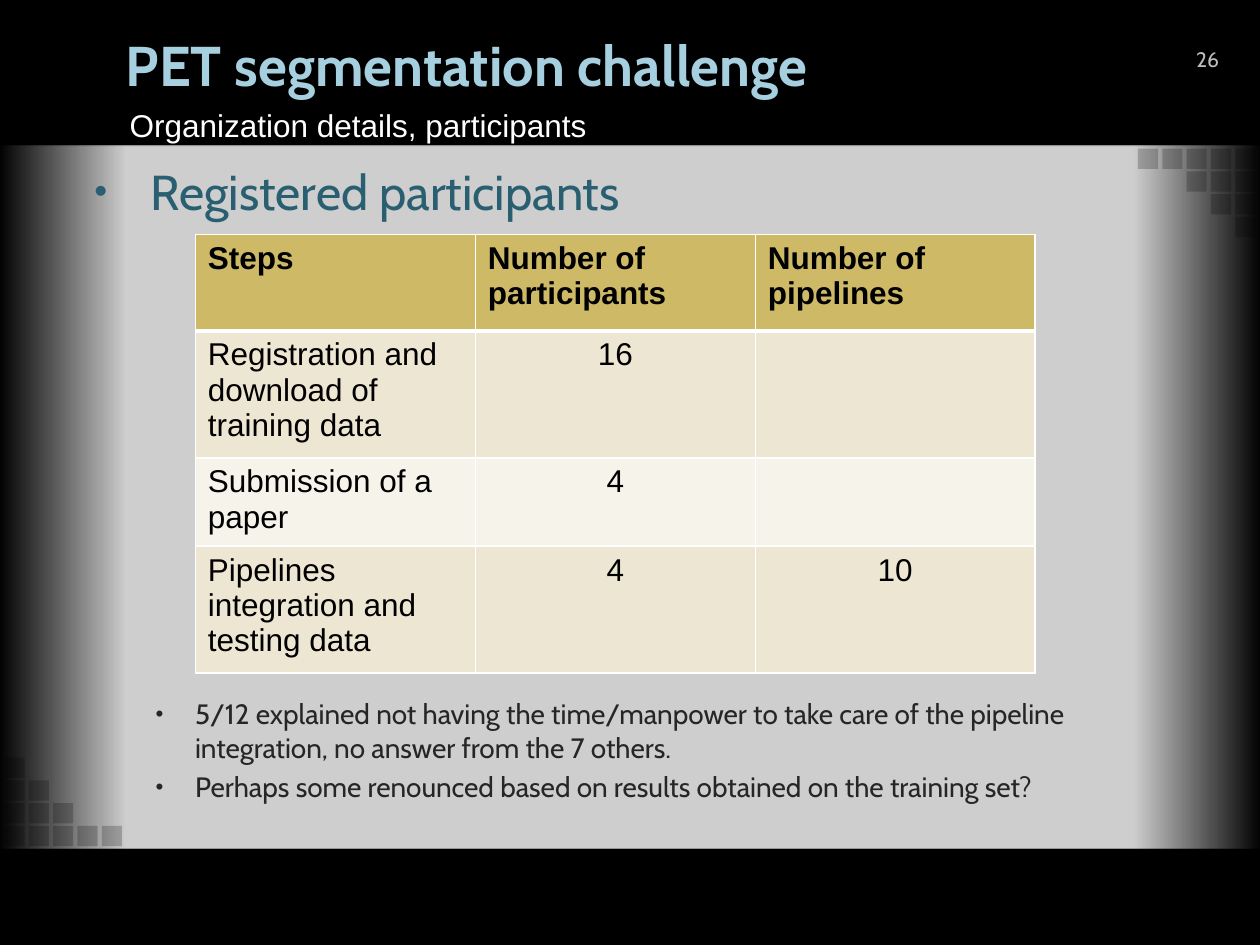
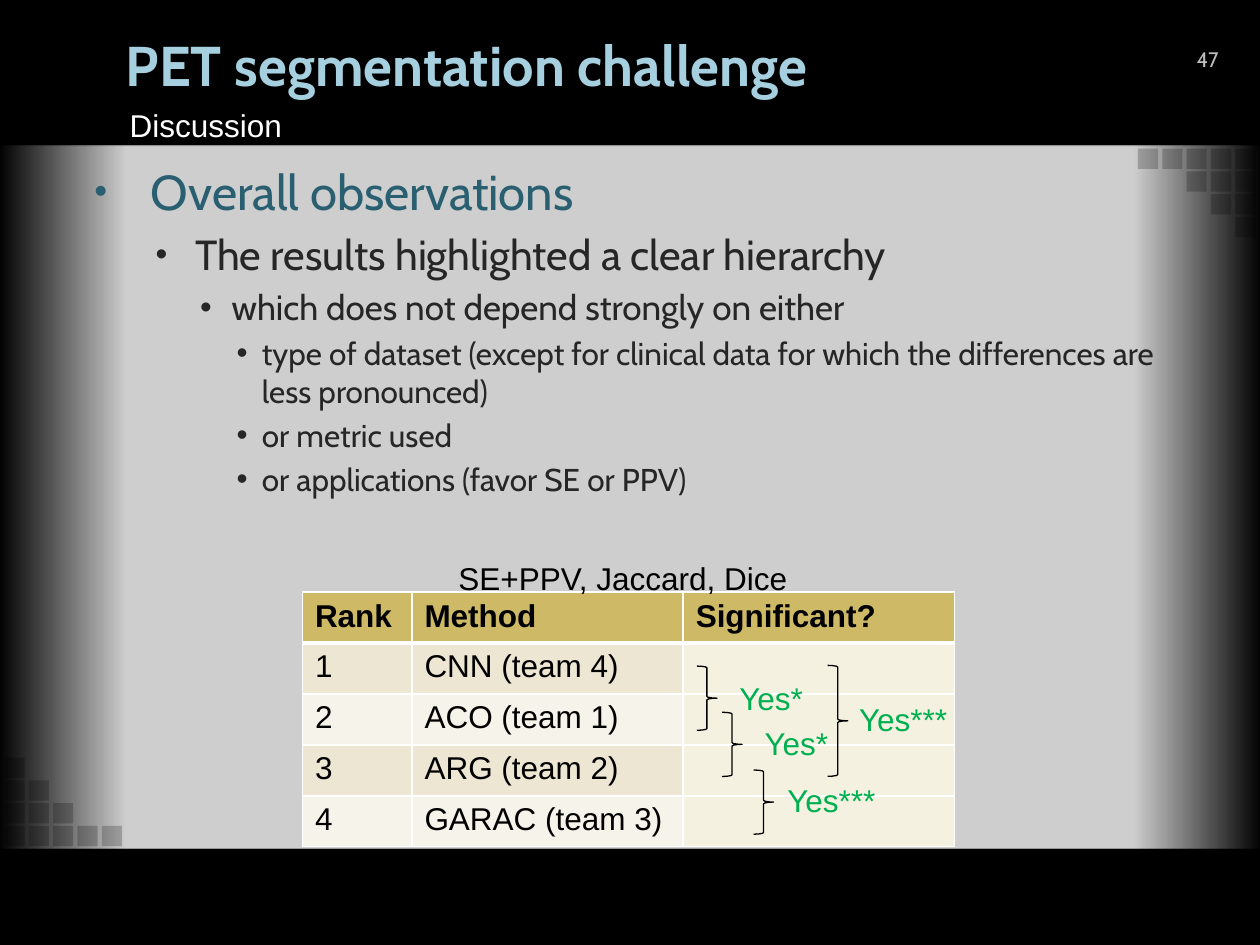
from lxml.etree import SubElement as Sub
from pptx import Presentation
from pptx.dml.color import RGBColor as RGB
from pptx.enum.shapes import MSO_SHAPE as Shape
from pptx.enum.text import MSO_ANCHOR as Anchor, MSO_AUTO_SIZE as AutoSize, PP_ALIGN as Align
from pptx.oxml.ns import qn
from pptx.util import Pt

BLACK = RGB(0x00, 0x00, 0x00)
WHITE = RGB(0xFF, 0xFF, 0xFF)
TITLE_BLUE = RGB(0xA6, 0xD0, 0xDF)
HEADING_TEAL = RGB(0x29, 0x5F, 0x71)
BODY_GREY = RGB(0x26, 0x26, 0x26)
NUMBER_GREY = RGB(0xBD, 0xBD, 0xBD)
GREEN = RGB(0x00, 0xB0, 0x50)
HEADER_GOLD = RGB(0xCE, 0xB9, 0x66)
ROW_SAND = RGB(0xED, 0xE6, 0xD3)
ROW_IVORY = RGB(0xF6, 0xF3, 0xEA)
COLUMN_CREAM = RGB(0xF5, 0xF1, 0xE0)

WIDTH, HEIGHT = 720, 540
PANEL_TOP, PANEL_BOTTOM = 83, 485.3
PANEL_STOPS = [(0, 0), (10, 80), (90, 80), (100, 0)]
SQUARE, SQUARE_STEP_X, SQUARE_STEP_Y = 11.5, 13.9, 13
SQUARE_ROWS = [5, 3, 2, 1]

# level: indent, hanging, size, bullet percent, colour
LEVELS = [
    (43.2, 32.4, 28, 75, HEADING_TEAL),
    (68.4, 22.5, 24, 80, BODY_GREY),
    (89.3, 18, 20, 95, BODY_GREY),
    (106.6, 14.4, 18, 100, BODY_GREY),
]

TITLE = "PET segmentation challenge"
PARTICIPANTS = {
    "number": "26",
    "subtitle": ("Organization details, participants", 278),
    "body": [(0, "Registered participants")],
}
PARTICIPANT_NOTES = [
    (1, "5/12 explained not having the time/manpower to take care of the pipeline "
        "integration, no answer from the 7 others."),
    (1, "Perhaps some renounced based on results obtained on the training set?"),
]
PARTICIPANT_ROWS = [
    ("Steps", "Number of participants", "Number of pipelines"),
    ("Registration and download of training data", "16", ""),
    ("Submission of a paper", "4", ""),
    ("Pipelines integration and testing data", "4", "10"),
]
DISCUSSION = {
    "number": "47",
    "subtitle": ("Discussion", 102.3),
    "body": [
        (0, "Overall observations"),
        (1, "The results highlighted a clear hierarchy"),
        (2, "which does not depend strongly on either"),
        (3, "type of dataset (except for clinical data for which the differences are "
            "less pronounced)"),
        (3, "or metric used"),
        (3, "or applications (favor SE or PPV)"),
    ],
}
RANKING_CAPTION = "SE+PPV, Jaccard, Dice"
RANKING_ROWS = [
    ("Rank", "Method", "Significant?"),
    ("1", "CNN (team 4)", ""),
    ("2", "ACO (team 1)", ""),
    ("3", "ARG (team 2)", ""),
    ("4", "GARAC (team 3)", ""),
]
# brace left, top, height; label, left, top, width
COMPARISONS = [
    (398.2, 380.6, 36.7, "Yes*", 415.4, 384.5, 51.1),
    (412.6, 407, 36.7, "Yes*", 429.8, 410.4, 51.1),
    (430.6, 440, 36.7, "Yes***", 442.8, 442.8, 65.5),
    (473, 380.2, 63.4, "Yes***", 483.8, 396.7, 65.5),
]


def add_span(para, text, size, color, font="Arial", bold=False):
    span = para.add_run()
    span.text = text
    span.font.name = font
    span.font.size = Pt(size)
    span.font.bold = bold
    span.font.color.rgb = color


def add_box(slide, left, top, width, height, wrap=True):
    box = slide.shapes.add_textbox(Pt(left), Pt(top), Pt(width), Pt(height))
    box.text_frame.word_wrap = wrap
    return box.text_frame


def add_label(slide, text, left, top, width, color):
    frame = add_box(slide, left, top, width, 29.1, wrap=False)
    frame.auto_size = AutoSize.SHAPE_TO_FIT_TEXT
    add_span(frame.paragraphs[0], text, 18, color)


def add_shape(slide, kind, left, top, width, height, fill=None, line=None):
    shape = slide.shapes.add_shape(kind, Pt(left), Pt(top), Pt(width), Pt(height))
    shape.shadow.inherit = False
    if fill is None:
        shape.fill.background()
    else:
        shape.fill.solid()
        shape.fill.fore_color.rgb = fill
    if line is None:
        shape.line.fill.background()
    else:
        shape.line.color.rgb = line
        shape.line.width = Pt(0.75)
    return shape


def add_color(parent, color, alpha):
    node = Sub(parent, qn("a:srgbClr"), val=str(color))
    Sub(node, qn("a:alpha"), val=str(alpha * 1000))


def add_panel(slide):
    panel = add_shape(slide, Shape.RECTANGLE, 0, PANEL_TOP, WIDTH, PANEL_BOTTOM - PANEL_TOP)
    panel.fill.gradient()
    panel.fill.gradient_angle = 0
    stops = panel._element.spPr.find(qn("a:gradFill")).find(qn("a:gsLst"))
    for stop in list(stops):
        stops.remove(stop)
    for position, alpha in PANEL_STOPS:
        add_color(Sub(stops, qn("a:gs"), pos=str(position * 1000)), WHITE, alpha)


def add_square(slide, left, top):
    square = add_shape(slide, Shape.RECTANGLE, left, top, SQUARE, SQUARE, BLACK)
    fill = square._element.spPr.find(qn("a:solidFill"))
    fill.remove(fill[0])
    add_color(fill, BLACK, 21)


def add_corner_squares(slide):
    for row, count in enumerate(SQUARE_ROWS):
        for column in range(count):
            left = 2.6 + column * SQUARE_STEP_X
            add_square(slide, WIDTH - SQUARE - left, 85 + row * SQUARE_STEP_Y)
            add_square(slide, left, 472 - row * SQUARE_STEP_Y)


def add_bullets(slide, items, top, height, size=None):
    frame = add_box(slide, 36, top, 648, height)
    for index, (level, text) in enumerate(items):
        indent, hanging, level_size, percent, color = LEVELS[level]
        para = frame.paragraphs[0] if index == 0 else frame.add_paragraph()
        props = para._p.get_or_add_pPr()
        props.set("marL", str(Pt(indent)))
        props.set("indent", str(-Pt(hanging)))
        Sub(props, qn("a:buSzPct"), val=str(percent * 1000))
        Sub(props, qn("a:buFont"), typeface="Arial")
        Sub(props, qn("a:buChar"), char="•")
        if index:
            para.space_before = Pt((size or level_size) * 0.2)
        add_span(para, text, size or level_size, color, "Cabin")


def set_borders(cell, top, bottom):
    props = cell._tc.get_or_add_tcPr()
    for side, width in (("L", 1), ("R", 1), ("T", top), ("B", bottom)):
        line = Sub(props, qn("a:ln" + side), w=str(Pt(width)))
        Sub(Sub(line, qn("a:solidFill")), qn("a:srgbClr"), val=str(WHITE))


def add_table(slide, rows, left, top, widths, heights, centred=(), last_fill=None):
    frame = slide.shapes.add_table(len(rows), len(widths), Pt(left), Pt(top),
                                   Pt(sum(widths)), Pt(sum(heights)))
    table = frame.table
    for column, width in zip(table.columns, widths):
        column.width = Pt(width)
    for r, (texts, height) in enumerate(zip(rows, heights)):
        table.rows[r].height = Pt(height)
        for c, text in enumerate(texts):
            cell = table.cell(r, c)
            set_borders(cell, 3 if r == 1 else 1, 3 if r == 0 else 1)
            fill = HEADER_GOLD if r == 0 else ROW_SAND if r % 2 else ROW_IVORY
            if r and last_fill and c == len(widths) - 1:
                fill = last_fill
            cell.fill.solid()
            cell.fill.fore_color.rgb = fill
            para = cell.text_frame.paragraphs[0]
            if r and c in centred:
                para.alignment = Align.CENTER
            if text:
                add_span(para, text, 18, BLACK, bold=r == 0)


def add_page(deck, content):
    slide = deck.slides.add_slide(deck.slide_layouts[6])
    slide.background.fill.solid()
    slide.background.fill.fore_color.rgb = BLACK
    add_panel(slide)
    for top, bottom in ((PANEL_BOTTOM, HEIGHT), (0, PANEL_TOP)):
        add_shape(slide, Shape.RECTANGLE, 0, top, WIDTH, bottom - top, BLACK)
    add_corner_squares(slide)
    add_bullets(slide, content["body"], 88.6, 391)

    number = add_box(slide, 660.2, 19.4, 59.8, 28.8)
    number.margin_left = number.margin_right = 0
    number.vertical_anchor = Anchor.MIDDLE
    number.paragraphs[0].alignment = Align.CENTER
    add_span(number.paragraphs[0], content["number"], 12, NUMBER_GREY, "Cabin")

    title = add_box(slide, 64.8, 9.4, 619.2, 62.6)
    title.vertical_anchor = Anchor.MIDDLE
    title.paragraphs[0].line_spacing = Pt(30)
    add_span(title.paragraphs[0], TITLE, 32, TITLE_BLUE, "Cabin", True)

    subtitle, width = content["subtitle"]
    add_label(slide, subtitle, 67, 56.9, width, WHITE)
    return slide


def main():
    deck = Presentation()
    deck.slide_width, deck.slide_height = Pt(WIDTH), Pt(HEIGHT)

    page = add_page(deck, PARTICIPANTS)
    add_table(page, PARTICIPANT_ROWS, 111.6, 134, [160] * 3, [55.2, 72.5, 50.4, 72.5],
              centred=(1, 2))
    add_bullets(page, PARTICIPANT_NOTES, 394.6, 72, size=16)

    page = add_page(deck, DISCUSSION)
    add_table(page, RANKING_ROWS, 172.8, 338.4, [62.6, 155, 155], [29.1] * 5,
              last_fill=COLUMN_CREAM)
    add_label(page, RANKING_CAPTION, 254.9, 316.1, 204.5, BLACK)
    for left, top, height, label, label_left, label_top, label_width in COMPARISONS:
        add_shape(page, Shape.RIGHT_BRACE, left, top, 11.5, height, line=BLACK)
        add_label(page, label, label_left, label_top, label_width, GREEN)

    deck.save("out.pptx")


if __name__ == "__main__":
    main()
